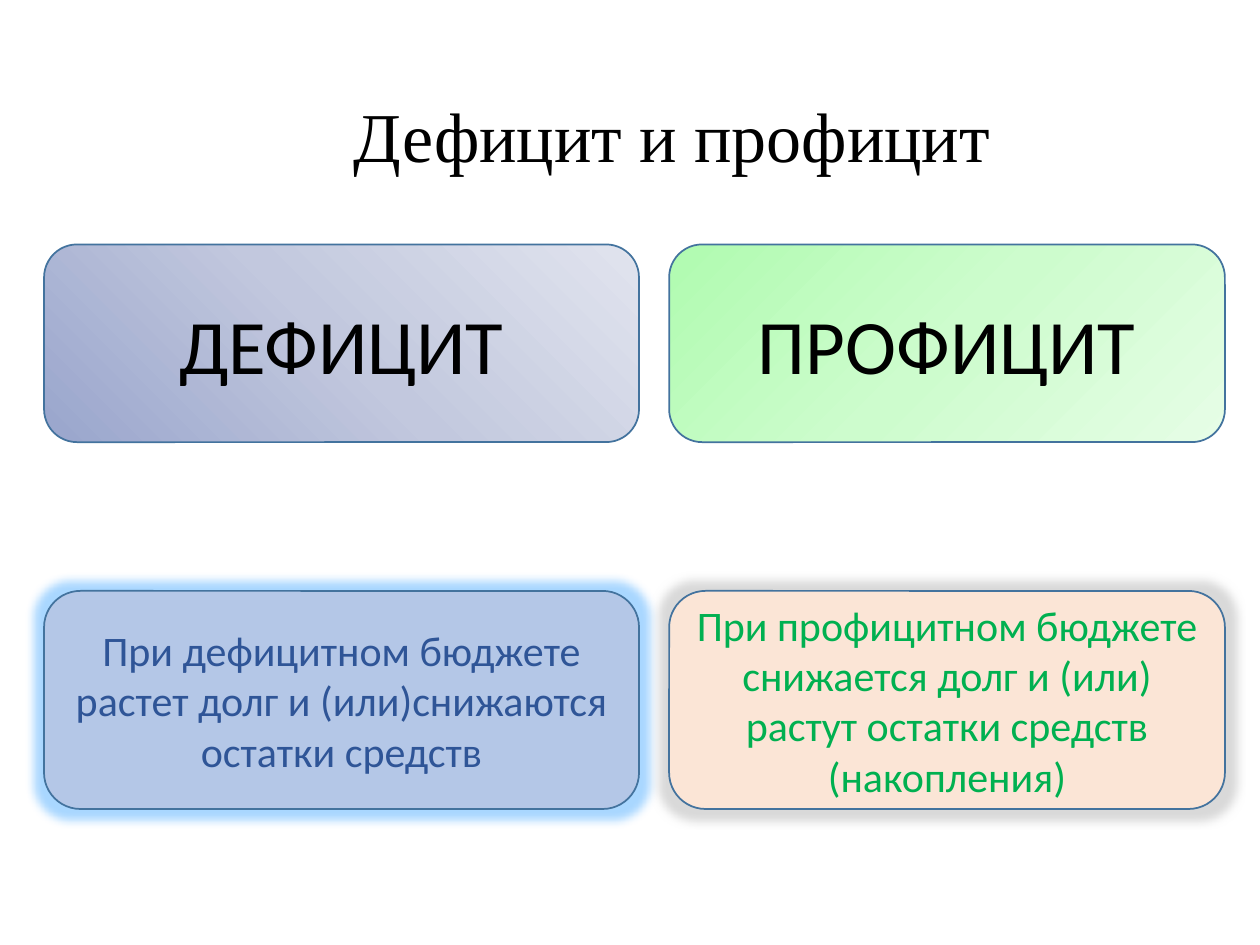
from copy import deepcopy

from lxml import etree
from pptx import Presentation
from pptx.dml.color import RGBColor
from pptx.enum.shapes import MSO_SHAPE
from pptx.enum.text import MSO_ANCHOR, PP_ALIGN
from pptx.oxml.ns import qn
from pptx.util import Pt

ROUNDED = MSO_SHAPE.ROUNDED_RECTANGLE
MIDDLE = MSO_ANCHOR.MIDDLE
CENTER = PP_ALIGN.CENTER
BORDER = "43739E"
HEADER_H, BODY_TOP, BODY_H = 113, 198, 124.6


def rgb(value):
    """Turn a hex string into a colour."""
    return RGBColor.from_string(value)


def write(sp, text, size, color="000000", font="Calibri"):
    """Write centred text into a shape."""
    tf = sp.text_frame
    tf.word_wrap = True
    tf.vertical_anchor = MIDDLE
    p = tf.paragraphs[0]
    p.alignment = CENTER
    r = p.add_run()
    r.text = text
    r.font.size = Pt(size)
    r.font.name = font
    r.font.color.rgb = rgb(color)


def add_card(s, left, top, width, height):
    """Add an outlined rounded card without a shadow."""
    sp = s.shapes.add_shape(ROUNDED, Pt(left), Pt(top), Pt(width), Pt(height))
    sp.shadow.inherit = False
    sp.line.color.rgb = rgb(BORDER)
    sp.line.width = Pt(1)
    return sp


def fill_gradient(sp, colors, angle):
    """Fill a shape with evenly spaced gradient stops."""
    sp.fill.gradient()
    sp.fill.gradient_angle = angle
    stops = sp._element.spPr.find(qn("a:gradFill")).find(qn("a:gsLst"))
    stops.append(deepcopy(stops[0]))
    for i, (stop, color) in enumerate(zip(sp.fill.gradient_stops, colors)):
        stop.position = i / (len(colors) - 1)
        stop.color.rgb = rgb(color)


def add_glow(sp, color):
    """Surround a shape with a translucent glow."""
    effects = sp._element.spPr.find(qn("a:effectLst"))
    glow = etree.SubElement(effects, qn("a:glow"), rad=str(Pt(11)))
    clr = etree.SubElement(glow, qn("a:srgbClr"), val=color)
    etree.SubElement(clr, qn("a:alpha"), val="40000")


def add_title(s, left, top, width, height, text):
    """Place the slide title."""
    sp = s.shapes.add_textbox(Pt(left), Pt(top), Pt(width), Pt(height))
    write(sp, text, 40, font="Times New Roman")


def add_column(s, left, top, width, header, body, gradient, angle, fill, color, glow):
    """Place a header card with its explanation card below."""
    sp = add_card(s, left, top, width, HEADER_H)
    fill_gradient(sp, gradient, angle)
    write(sp, header, 44)
    sp = add_card(s, left, top + BODY_TOP, width, BODY_H)
    sp.fill.solid()
    sp.fill.fore_color.rgb = rgb(fill)
    add_glow(sp, glow)
    write(sp, body, 24, color)


def main():
    """Build the slide."""
    prs = Presentation()
    prs.slide_width, prs.slide_height = Pt(720), Pt(540)
    s = prs.slides.add_slide(prs.slide_layouts[6])
    add_title(s, 144, 50, 480, 54, "Дефицит и профицит")
    add_column(
        s, 25.2, 139.7, 340, "ДЕФИЦИТ",
        "При дефицитном бюджете растет долг и (или)снижаются остатки средств",
        ("99A5CC", "C2C8DE", "E1E4EE"), 45, "B4C7E7", "2F5597", "289BFF",
    )
    add_column(
        s, 382.4, 139.7, 317.6, "ПРОФИЦИТ",
        "При профицитном бюджете снижается долг и (или) растут остатки средств (накопления)",
        ("B0FBB0", "CDFCCD", "E6FDE6"), 315, "FBE5D6", "00B050", "A0A0A0",
    )
    prs.save("out.pptx")


if __name__ == "__main__":
    main()
